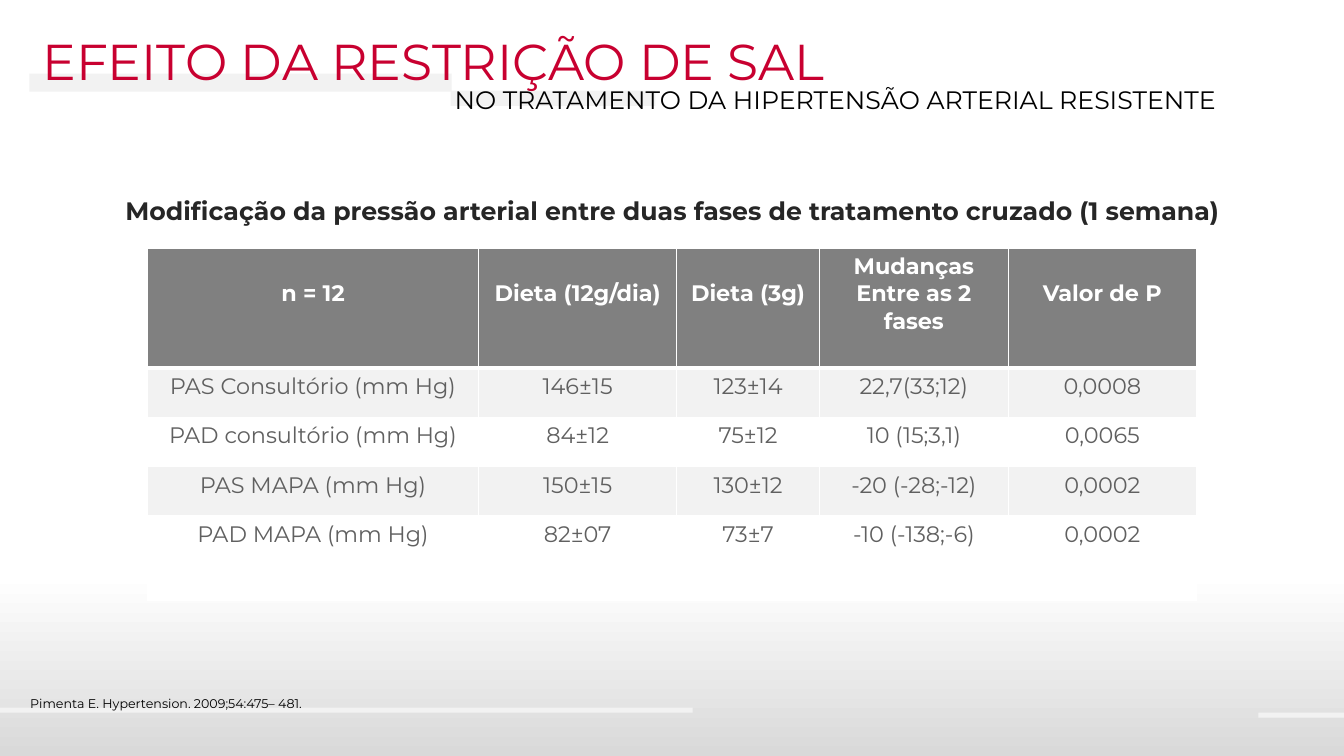
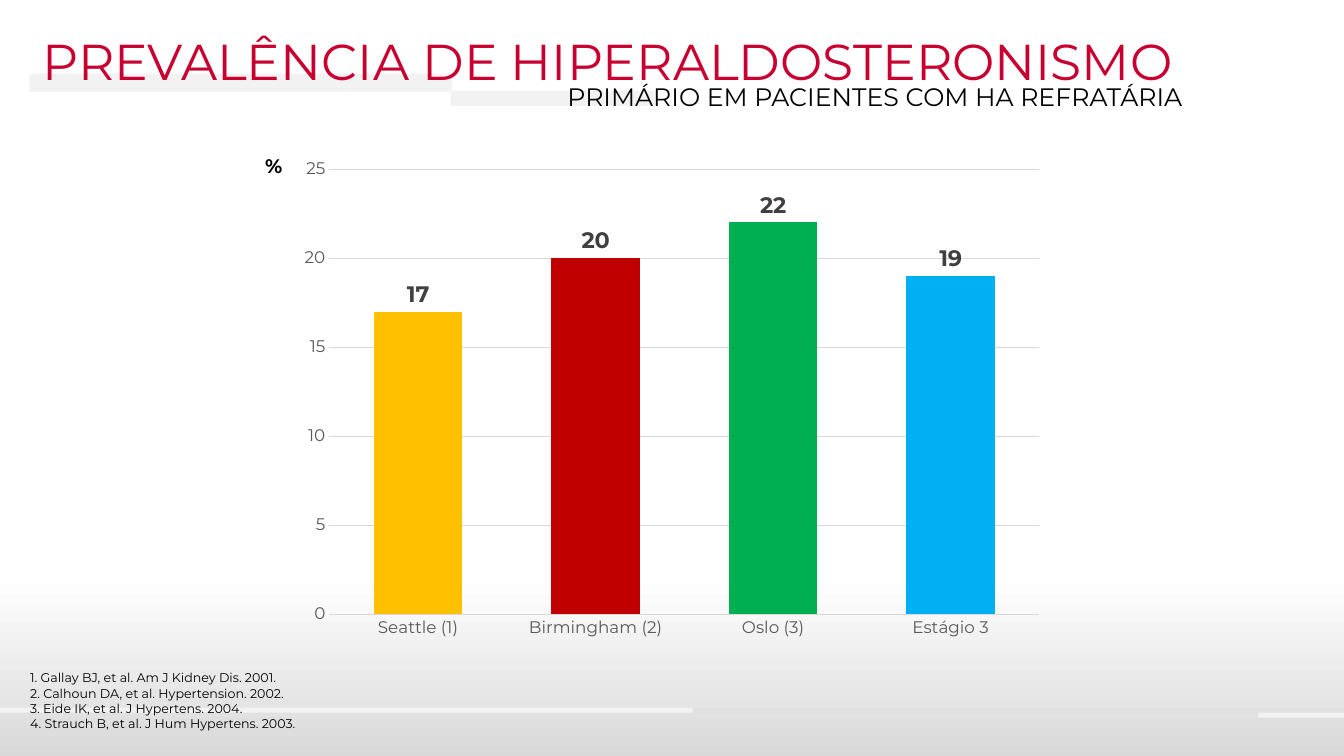
from dataclasses import dataclass

from lxml import etree
from pptx import Presentation
from pptx.chart.data import CategoryChartData
from pptx.dml.color import RGBColor
from pptx.enum.chart import XL_CHART_TYPE, XL_LABEL_POSITION, XL_TICK_MARK
from pptx.enum.shapes import MSO_SHAPE
from pptx.enum.text import MSO_ANCHOR, MSO_AUTO_SIZE, PP_ALIGN
from pptx.oxml.ns import qn
from pptx.util import Inches, Pt

LEFT, CENTER = PP_ALIGN.LEFT, PP_ALIGN.CENTER
TOP = MSO_ANCHOR.TOP
NO_FIT = MSO_AUTO_SIZE.NONE
RECT = MSO_SHAPE.RECTANGLE
COLUMN = XL_CHART_TYPE.COLUMN_CLUSTERED
OUTSIDE_END = XL_LABEL_POSITION.OUTSIDE_END
NO_TICK = XL_TICK_MARK.NONE
TITLE_ONLY = 5


@dataclass(frozen=True)
class Theme:
    font: str = "Montserrat"
    # Colours
    white: str = "FFFFFF"
    black: str = "000000"
    title: str = "C80030"
    band: str = "F2F2F2"
    shade: str = "D9D9D9"
    header: str = "808080"
    heading: str = "262626"
    cell: str = "606060"
    axis: str = "595959"
    label: str = "404040"
    # Type sizes
    title_size: int = 36
    subtitle_size: int = 18
    table_size: int = 16
    unit_size: int = 14
    axis_size: int = 12
    note_size: int = 9


def rgb(value):
    return RGBColor.from_string(value)


class Deck:
    def __init__(self, theme):
        self.theme = theme
        self.prs = Presentation()
        self.prs.slide_width, self.prs.slide_height = Inches(13.33), Inches(7.5)
        self.s = None

    def format_font(self, font, size, color, bold=False):
        values = {"name": self.theme.font, "size": Pt(size), "bold": bold}
        for name, value in values.items():
            setattr(font, name, value)
        font.color.rgb = rgb(color)

    def fill_text(self, tf, lines, size, color, bold=False, align=LEFT):
        for i, line in enumerate(lines):
            p = tf.paragraphs[0] if i == 0 else tf.add_paragraph()
            p.alignment = align
            r = p.add_run()
            r.text = line
            self.format_font(r.font, size, color, bold)

    # Parts shared through the slide master
    def background(self):
        fill = self.prs.slide_master.background.fill
        fill.gradient()
        fill.gradient_angle = 270
        stops = ((0.76, self.theme.white), (1, self.theme.shade))
        for stop, (position, color) in zip(fill.gradient_stops, stops):
            stop.position = position
            stop.color.rgb = rgb(color)

    def master_bands(self, boxes):
        tree = self.prs.slide_master.shapes.element
        for i, box in enumerate(boxes):
            sp = self.s.shapes.add_shape(RECT, *map(Inches, box))
            sp.shadow.inherit = False
            sp.fill.solid()
            sp.fill.fore_color.rgb = rgb(self.theme.band)
            sp.line.fill.background()
            sp.name = f"Band {i + 1}"
            sp.element.nvSpPr.cNvPr.set("id", str(100 + i))
            tree.insert(2 + i, sp.element)

    # Slide elements
    def new_slide(self, title, width):
        self.s = self.prs.slides.add_slide(self.prs.slide_layouts[TITLE_ONLY])
        sp = self.s.shapes.title
        box = {"left": 0.32, "top": 0.25, "width": width, "height": 0.71}
        for name, value in box.items():
            setattr(sp, name, Inches(value))
        tf = sp.text_frame
        frame = {"word_wrap": True, "auto_size": NO_FIT, "vertical_anchor": TOP}
        for name, value in frame.items():
            setattr(tf, name, value)
        self.fill_text(tf, [title], self.theme.title_size, self.theme.title)

    def text(self, box, lines, size, color=None, bold=False, align=LEFT):
        tf = self.s.shapes.add_textbox(*map(Inches, box)).text_frame
        tf.word_wrap = True
        self.fill_text(tf, lines, size, color or self.theme.black, bold, align)

    def subtitle(self, box, line):
        self.text(box, [line], self.theme.subtitle_size)

    def notes(self, top, width, height, lines):
        self.text((0.2, top, width, height), lines, self.theme.note_size)

    def cell_borders(self, cell, widths):
        tc_pr = cell._tc.get_or_add_tcPr()
        for i, (side, width) in enumerate(widths.items()):
            ln = etree.Element(qn(f"a:ln{side}"), w=str(Pt(width)))
            fill = etree.SubElement(ln, qn("a:solidFill"))
            etree.SubElement(fill, qn("a:srgbClr"), val=self.theme.white)
            tc_pr.insert(i, ln)

    def table(self, left, top, widths, heights, rows):
        th = self.theme
        size = map(Inches, (left, top, sum(widths), sum(heights)))
        tbl = self.s.shapes.add_table(len(rows), len(widths), *size).table
        for column, width in zip(tbl.columns, widths):
            column.width = Inches(width)
        for i, (row, height, texts) in enumerate(zip(tbl.rows, heights, rows)):
            row.height = Inches(height)
            head = i == 0
            background = th.header if head else th.band if i % 2 else th.white
            for cell, text in zip(row.cells, texts):
                lines = text.split("\n")
                cell.fill.solid()
                cell.fill.fore_color.rgb = rgb(background)
                cell.vertical_anchor = TOP
                # Short headings start on the second line
                cell.margin_top = Inches(0.32 if head and len(lines) == 1 else 0.05)
                self.cell_borders(cell, {"L": 1, "R": 1, "T": 3 if i == 1 else 1,
                                         "B": 3 if head else 1})
                self.fill_text(cell.text_frame, lines, th.table_size,
                               th.white if head else th.cell, head, CENTER)

    def column_chart(self, box, values, colors):
        th = self.theme
        data = CategoryChartData()
        data.categories = list(values)
        data.add_series("Series 1", list(values.values()))
        chart = self.s.shapes.add_chart(COLUMN, *map(Inches, box), data).chart
        chart.has_legend = chart.has_title = False
        self.format_font(chart.font, th.axis_size, th.axis)

        # Axes
        for axis in (chart.category_axis, chart.value_axis):
            axis.major_tick_mark = axis.minor_tick_mark = NO_TICK
            self.format_font(axis.tick_labels.font, th.axis_size, th.axis)
        scale = {"minimum_scale": 0, "maximum_scale": 25, "major_unit": 5,
                 "has_major_gridlines": True}
        for name, value in scale.items():
            setattr(chart.value_axis, name, value)
        chart.value_axis.format.line.fill.background()
        for part in (chart.category_axis, chart.value_axis.major_gridlines):
            part.format.line.color.rgb = rgb(th.shade)
            part.format.line.width = Pt(0.75)

        # Columns and labels
        plot = chart.plots[0]
        options = {"gap_width": 100, "overlap": -27, "vary_by_categories": False,
                   "has_data_labels": True}
        for name, value in options.items():
            setattr(plot, name, value)
        labels = plot.data_labels
        labels.show_value = True
        labels.position = OUTSIDE_END
        self.format_font(labels.font, th.table_size, th.label, True)
        for i, color in enumerate(colors):
            fill = plot.series[0].points[i].format.fill
            fill.solid()
            fill.fore_color.rgb = rgb(color)


def main():
    th = Theme()
    deck = Deck(th)
    deck.background()

    # Salt restriction
    deck.new_slide("EFEITO DA RESTRIÇÃO DE SAL", 10.4)
    deck.master_bands([
        (0.29, 0.73, 4.19, 0.18),
        (4.47, 0.9, 2.03, 0.15),
        (-0.02, 7.02, 6.89, 0.05),
        (12.48, 7.07, 0.85, 0.05),
    ])
    deck.subtitle((4.41, 0.79, 8.12, 0.4),
                  "NO TRATAMENTO DA HIPERTENSÃO ARTERIAL RESISTENTE")
    deck.text((0.62, 1.89, 12.1, 0.4),
              ["Modificação da pressão arterial entre duas fases de tratamento cruzado (1 semana)"],
              th.subtitle_size, th.heading, True, CENTER)
    deck.table(1.46, 2.46, (3.29, 1.96, 1.42, 1.87, 1.87), (1.19, 0.49, 0.49, 0.49, 0.84), [
        ("n = 12", "Dieta (12g/dia)", "Dieta (3g)", "Mudanças\nEntre as 2 fases", "Valor de P"),
        ("PAS Consultório (mm Hg)", "146±15", "123±14", "22,7(33;12)", "0,0008"),
        ("PAD consultório (mm Hg)", "84±12", "75±12", "10 (15;3,1)", "0,0065"),
        ("PAS MAPA (mm Hg)", "150±15", "130±12", "-20 (-28;-12)", "0,0002"),
        ("PAD MAPA (mm Hg)", "82±07", "73±7", "-10 (-138;-6)", "0,0002"),
    ])
    deck.notes(6.85, 5.61, 0.25, ["Pimenta E. Hypertension. 2009;54:475– 481."])

    # Prevalence of hyperaldosteronism
    deck.new_slide("PREVALÊNCIA DE HIPERALDOSTERONISMO", 12.79)
    deck.subtitle((5.53, 0.76, 6.64, 0.4), "PRIMÁRIO EM PACIENTES COM HA REFRATÁRIA")
    deck.notes(6.6, 4.67, 0.71, [
        "1. Gallay BJ, et al. Am J Kidney Dis. 2001.",
        "2. Calhoun DA, et al. Hypertension. 2002.",
        "3. Eide IK, et al. J Hypertens. 2004.",
        "4. Strauch B, et al. J Hum Hypertens. 2003.",
    ])
    deck.column_chart((2.87, 1.48, 7.59, 4.95),
                      {"Seattle (1)": 17, "Birmingham (2)": 20, "Oslo (3)": 22, "Estágio 3": 19},
                      ("FFC000", "C00000", "00B050", "00B0F0"))
    deck.text((2.53, 1.48, 0.58, 0.34), ["%"], th.unit_size, bold=True)

    deck.prs.save("out.pptx")


if __name__ == "__main__":
    main()
